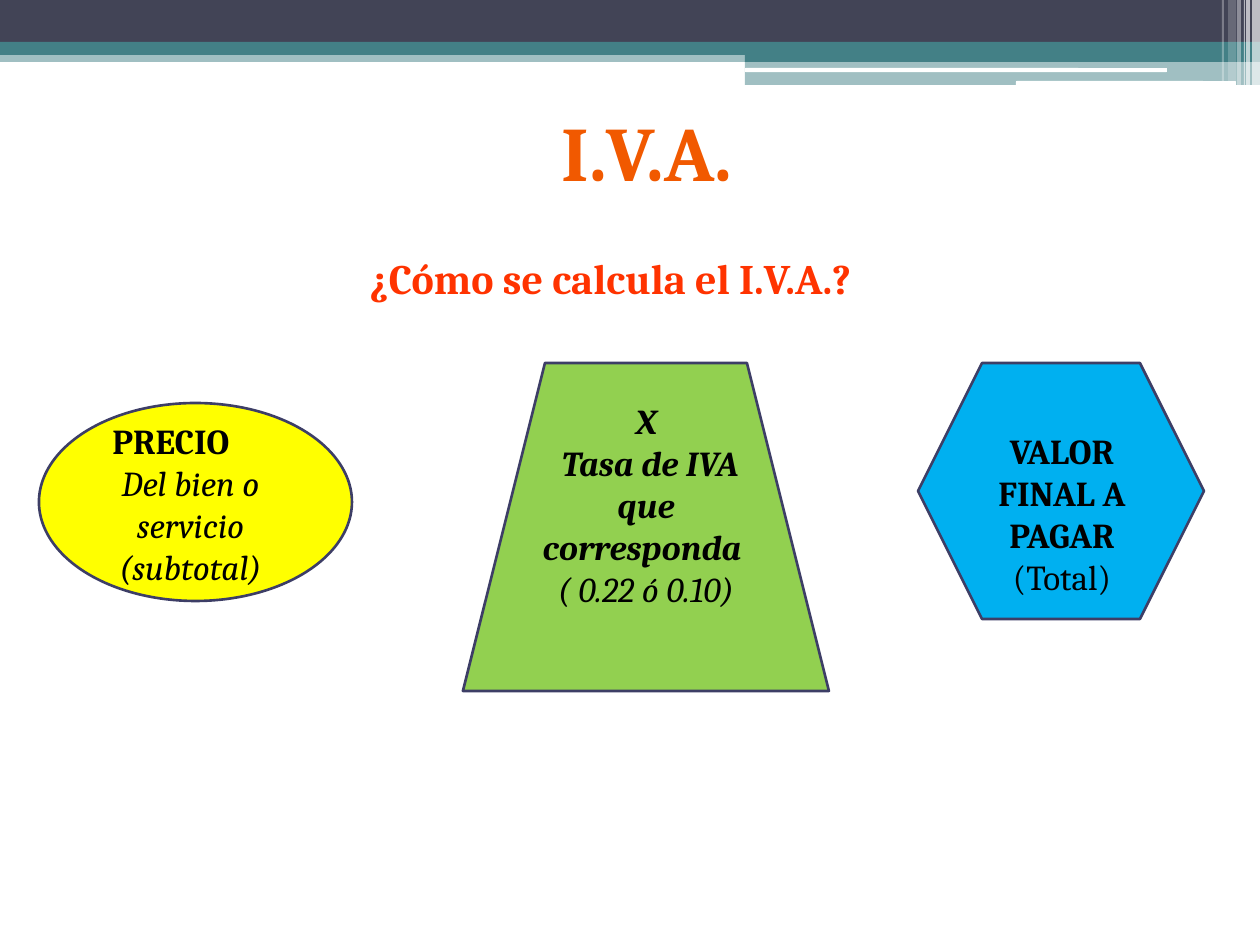
from lxml import etree
from pptx import Presentation
from pptx.dml.color import RGBColor
from pptx.enum.shapes import MSO_SHAPE
from pptx.enum.text import MSO_AUTO_SIZE, PP_ALIGN
from pptx.oxml.ns import qn
from pptx.util import Emu, Pt

RECT, ROUND = MSO_SHAPE.RECTANGLE, MSO_SHAPE.ROUNDED_RECTANGLE
HEXAGON, TRAPEZOID, OVAL = MSO_SHAPE.HEXAGON, MSO_SHAPE.TRAPEZOID, MSO_SHAPE.OVAL
LEFT, CENTER = PP_ALIGN.LEFT, PP_ALIGN.CENTER
FIT = MSO_AUTO_SIZE.SHAPE_TO_FIT_TEXT

NAVY = RGBColor(0x42, 0x44, 0x56)
TEAL = RGBColor(0x43, 0x80, 0x86)
WHITE = RGBColor(0xFF, 0xFF, 0xFF)
BLACK = RGBColor(0x00, 0x00, 0x00)
BLUE = RGBColor(0x00, 0xB0, 0xF0)
GREEN = RGBColor(0x92, 0xD0, 0x50)
YELLOW = RGBColor(0xFF, 0xFF, 0x00)
OUTLINE = RGBColor(0x3D, 0x3E, 0x66)
ORANGE = RGBColor(0xF1, 0x59, 0x00)
RED = RGBColor(0xFF, 0x33, 0x00)

FONT = "Cambria"
BOLD, ITALIC = {"bold": True}, {"italic": True}
BOLD_ITALIC = {**BOLD, **ITALIC}

BANDS = [
    (RECT, (0, 50, 1260, 12), TEAL, 50),
    (RECT, (0, 0, 1260, 42), NAVY, 100),
    (RECT, (0, 42, 1260, 13), TEAL, 100),
    (RECT, (745, 49, 515, 13), TEAL, 100),
    (RECT, (745, 61, 515, 24), TEAL, 50),
    (ROUND, (745, 68, 422, 4), WHITE, 100),
    (ROUND, (1016, 81, 220, 5), WHITE, 100),
]
STRIPES = [
    (1252, 8, 85, 65),
    (1246, 4, 85, 65),
    (1244, 1, 85, 60),
    (1237, 4, 85, 40),
    (1228, 8, 81, 20),
    (1222, 2, 81, 30),
]
FIGURES = [
    (HEXAGON, (918, 363, 286, 256), BLUE),
    (TRAPEZOID, (463, 363, 366, 328), GREEN),
    (OVAL, (39, 403, 313, 198), YELLOW),
]
HEADINGS = [
    ((519, 98, 256, 106), "I.V.A.", 44, ORANGE, False),
    ((134, 246, 953, 63), "¿Cómo se calcula el I.V.A.?", 24, RED, True),
]
LABELS = [
    ((69, 413, 243, 183), [
        (LEFT, 31, [("PRECIO", BOLD)]),
        (CENTER, 0, [("Del bien o servicio (subtotal)", ITALIC)]),
    ]),
    ((948, 423, 228, 183), [
        (CENTER, 0, [("VALOR FINAL A PAGAR ", BOLD), ("(Total)", {})]),
    ]),
    ((512, 393, 268, 224), [
        (CENTER, 0, [("X", BOLD_ITALIC)]),
        (CENTER, 0, [(" Tasa de IVA que corresponda ", BOLD_ITALIC)]),
        (CENTER, 0, [("( 0.22 ó 0.10)", ITALIC)]),
    ]),
]


def px(n):
    return Emu(round(n * 914400 / 126))


def add_figure(slide, kind, box, color, opacity=100, outline=None):
    sp = slide.shapes.add_shape(kind, *map(px, box))
    sp.shadow.inherit = False
    sp.fill.solid()
    sp.fill.fore_color.rgb = color
    if opacity < 100:
        clr = sp.fill._xPr.find(qn("a:solidFill"))[0]
        etree.SubElement(clr, qn("a:alpha"), val=str(opacity * 1000))
    if outline is None:
        sp.line.fill.background()
    else:
        sp.line.color.rgb = outline
        sp.line.width = Pt(1.5)


def add_text(slide, box, paragraphs, size, color, wrap=True):
    tf = slide.shapes.add_textbox(*map(px, box)).text_frame
    tf.word_wrap = wrap
    tf.auto_size = FIT
    for i, (align, indent, runs) in enumerate(paragraphs):
        p = tf.add_paragraph() if i else tf.paragraphs[0]
        p.alignment = align
        if indent:
            p._p.get_or_add_pPr().set("marL", str(px(indent)))
        for text, style in runs:
            r = p.add_run()
            r.text = text
            r.font.color.rgb = color
            for name, value in {"name": FONT, "size": Pt(size), **style}.items():
                setattr(r.font, name, value)


def main():
    prs = Presentation()
    prs.slide_width, prs.slide_height = px(1260), px(945)
    slide = prs.slides.add_slide(prs.slide_layouts[6])
    for kind, box, color, opacity in BANDS:
        add_figure(slide, kind, box, color, opacity)
    for left, width, height, opacity in STRIPES:
        add_figure(slide, RECT, (left, 0, width, height), WHITE, opacity)
    for kind, box, color in FIGURES:
        add_figure(slide, kind, box, color, outline=OUTLINE)
    for box, text, size, color, wrap in HEADINGS:
        add_text(slide, box, [(CENTER, 0, [(text, BOLD)])], size, color, wrap)
    for box, paragraphs in LABELS:
        add_text(slide, box, paragraphs, 20, BLACK)
    prs.save("out.pptx")


if __name__ == "__main__":
    main()
